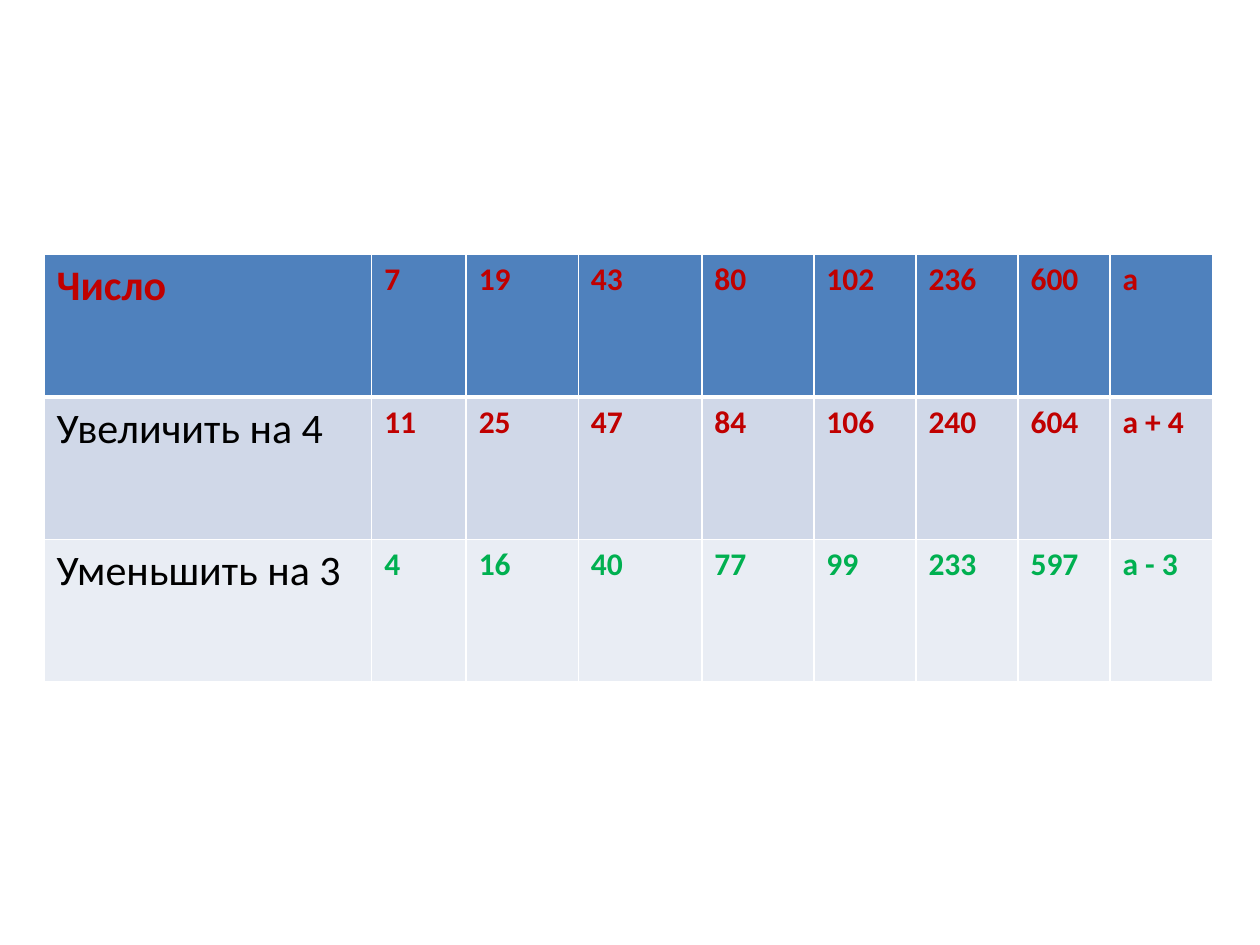
"""Build a slide with a table of numbers increased by 4 and decreased by 3."""
from lxml.etree import SubElement
from pptx import Presentation
from pptx.dml.color import RGBColor
from pptx.oxml.ns import qn
from pptx.util import Inches, Pt

THEME = {
    "font": "Calibri",
    "label_size": 24,
    "value_size": 18,
    "black": "000000",
    "red": "C00000",
    "green": "00B050",
    "border": "FFFFFF",
    "thin": 1,
    "thick": 3,
}

ROWS = [
    {"label": "Число", "label_color": "red", "label_bold": True,
     "values": ["7", "19", "43", "80", "102", "236", "600", "а"],
     "value_color": "red", "fill": "4F81BD"},
    {"label": "Увеличить на 4", "label_color": "black", "label_bold": False,
     "values": ["11", "25", "47", "84", "106", "240", "604", "а + 4"],
     "value_color": "red", "fill": "D0D8E8"},
    {"label": "Уменьшить на 3", "label_color": "black", "label_bold": False,
     "values": ["4", "16", "40", "77", "99", "233", "597", "а - 3"],
     "value_color": "green", "fill": "E9EDF4"},
]
COLUMN_WIDTHS = [2.6, 0.75, 0.89, 0.98, 0.89, 0.81, 0.81, 0.73, 0.82]
ROW_HEIGHT = 1.13
TABLE_LEFT, TABLE_TOP = 0.35, 2.02


def set_borders(cell, widths):
    """Draw solid borders on a cell, given a width in points for each side."""
    properties = cell._tc.get_or_add_tcPr()
    for side, width in widths.items():
        line = SubElement(properties, qn(f"a:ln{side}"), w=str(Pt(width)))
        fill = SubElement(line, qn("a:solidFill"))
        SubElement(fill, qn("a:srgbClr"), val=THEME["border"])


def write_cell(cell, text, fill, color, size, bold):
    """Fill a cell and write its formatted text."""
    cell.fill.solid()
    cell.fill.fore_color.rgb = RGBColor.from_string(fill)
    run = cell.text_frame.paragraphs[0].add_run()
    run.text = text
    formats = {"name": THEME["font"], "size": Pt(size), "bold": bold}
    for attribute, value in formats.items():
        setattr(run.font, attribute, value)
    run.font.color.rgb = RGBColor.from_string(THEME[color])


def add_number_table(slide):
    """Add the table with one label and eight values in each row."""
    table = slide.shapes.add_table(
        len(ROWS), len(COLUMN_WIDTHS), Inches(TABLE_LEFT), Inches(TABLE_TOP),
        Inches(sum(COLUMN_WIDTHS)), Inches(ROW_HEIGHT * len(ROWS))).table
    for column, width in zip(table.columns, COLUMN_WIDTHS):
        column.width = Inches(width)
    for index, (table_row, row) in enumerate(zip(table.rows, ROWS)):
        table_row.height = Inches(ROW_HEIGHT)
        borders = dict.fromkeys("LRTB", THEME["thin"])
        if index < 2:
            borders["BT"[index]] = THEME["thick"]
        label = (row["label"], row["fill"], row["label_color"],
                 THEME["label_size"], row["label_bold"])
        values = [(value, row["fill"], row["value_color"],
                   THEME["value_size"], True) for value in row["values"]]
        for cell, content in zip(table_row.cells, [label, *values]):
            set_borders(cell, borders)
            write_cell(cell, *content)


def main():
    """Create and save the presentation."""
    presentation = Presentation()
    presentation.slide_width = Inches(10)
    presentation.slide_height = Inches(7.5)
    slide = presentation.slides.add_slide(presentation.slide_layouts[6])
    add_number_table(slide)
    presentation.save("out.pptx")


if __name__ == "__main__":
    main()
